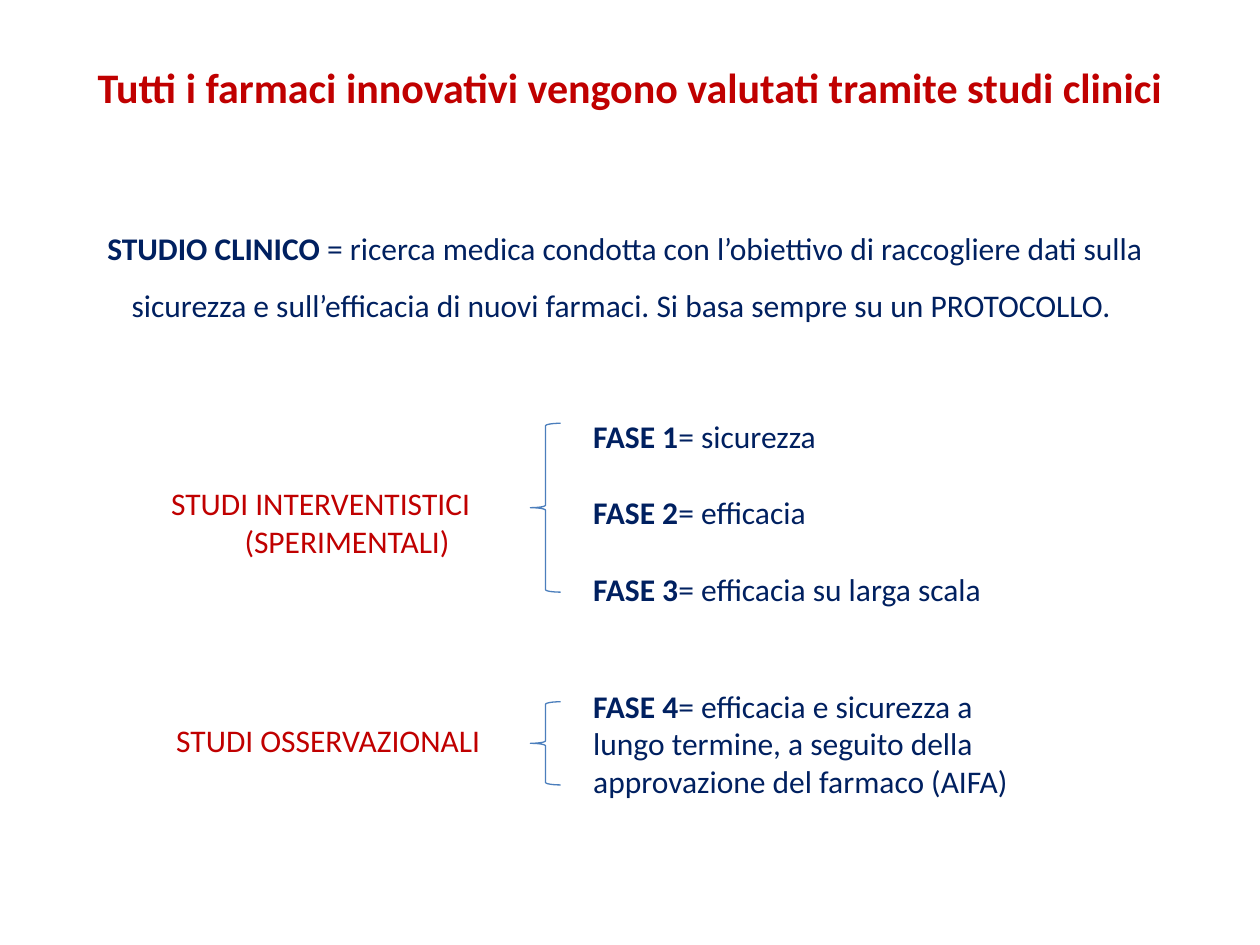
from pptx import Presentation
from pptx.dml.color import RGBColor
from pptx.enum.shapes import MSO_SHAPE
from pptx.enum.text import PP_ALIGN
from pptx.util import Inches, Pt

RED, NAVY, BLUE = "C00000", "002060", "4B7EBC"
LEFT, MID = PP_ALIGN.LEFT, PP_ALIGN.CENTER


def color(code):
    return RGBColor.from_string(code)


def write(lines, x, y, w, h, size=18, ink=NAVY, aligns=(LEFT,), gap=0, space=None):
    """Each line is a list of (text, bold) runs; the last alignment repeats."""
    frame = slide.shapes.add_textbox(Inches(x), Inches(y), Inches(w), Inches(h)).text_frame
    frame.word_wrap = True
    for i, runs in enumerate(lines):
        para = frame.add_paragraph() if i else frame.paragraphs[0]
        para.alignment = aligns[min(i, len(aligns) - 1)]
        if space:
            para.line_spacing = space
        if i and gap:
            para.space_before = Pt(gap)
        for text, bold in runs:
            run = para.add_run()
            run.text = text
            run.font.name = "Calibri"
            run.font.size = Pt(size)
            run.font.bold = bold
            run.font.color.rgb = color(ink)


deck = Presentation()
deck.slide_width, deck.slide_height = Inches(10), Inches(7.5)
slide = deck.slides.add_slide(deck.slide_layouts[6])

# Title
write([[("Tutti i farmaci innovativi vengono valutati tramite studi clinici", True)]],
      0, 0.44, 10, 0.5, size=24, ink=RED, aligns=(MID,))

# Definition
write([[("STUDIO CLINICO ", True),
        ("= ricerca medica condotta con l’obiettivo di raccogliere dati sulla sicurezza "
         "e sull’efficacia di nuovi farmaci. Si basa sempre su un PROTOCOLLO. ", False)]],
      0.67, 1.62, 8.58, 0.96, aligns=(MID,), space=1.5)

# Phases
write([[("FASE 1", True), ("= sicurezza", False)],
       [("FASE 2", True), ("= efficacia", False)],
       [("FASE 3", True), ("= efficacia su larga scala", False)]],
      4.61, 3.26, 5.2, 1.62, gap=22)
write([[("FASE 4", True),
        ("= efficacia e sicurezza a lungo termine, a seguito della "
         "approvazione del farmaco (AIFA)", False)]],
      4.61, 5.4, 3.62, 1.01)

# Study types
write([[("STUDI INTERVENTISTICI", False)], [("(SPERIMENTALI)", False)]],
      1.26, 3.79, 2.99, 0.71, ink=RED, aligns=(LEFT, MID))
write([[("STUDI OSSERVAZIONALI", False)]], 1.3, 5.67, 2.99, 0.4, ink=RED)

# Braces joining each type to its phases
for y, h in ((3.36, 1.34), (5.57, 0.66)):
    brace = slide.shapes.add_shape(MSO_SHAPE.LEFT_BRACE, Inches(4.21), Inches(y),
                                   Inches(0.24), Inches(h))
    brace.shadow.inherit = False
    brace.fill.background()
    brace.line.color.rgb = color(BLUE)
    brace.line.width = Pt(0.75)

deck.save("out.pptx")
